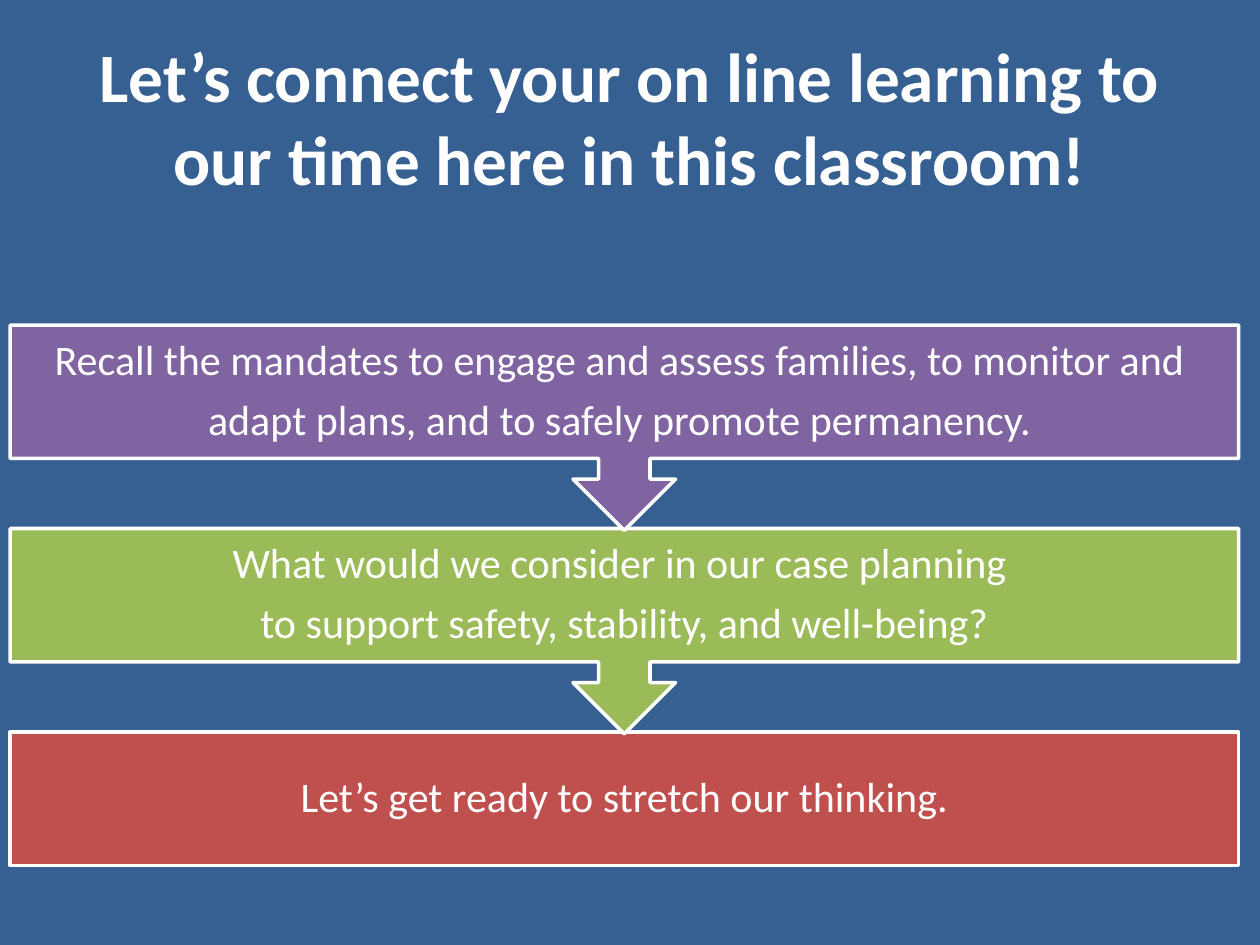
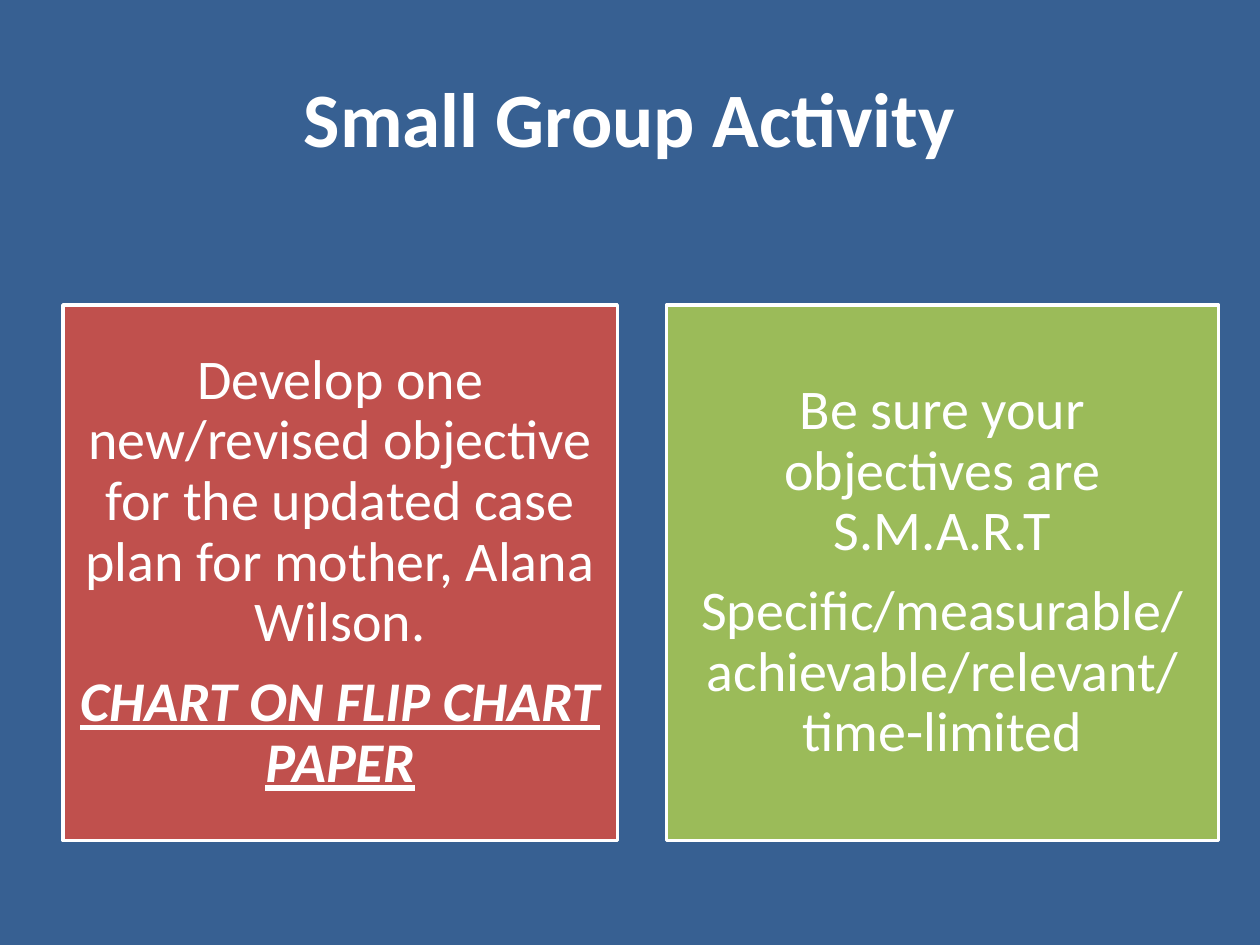
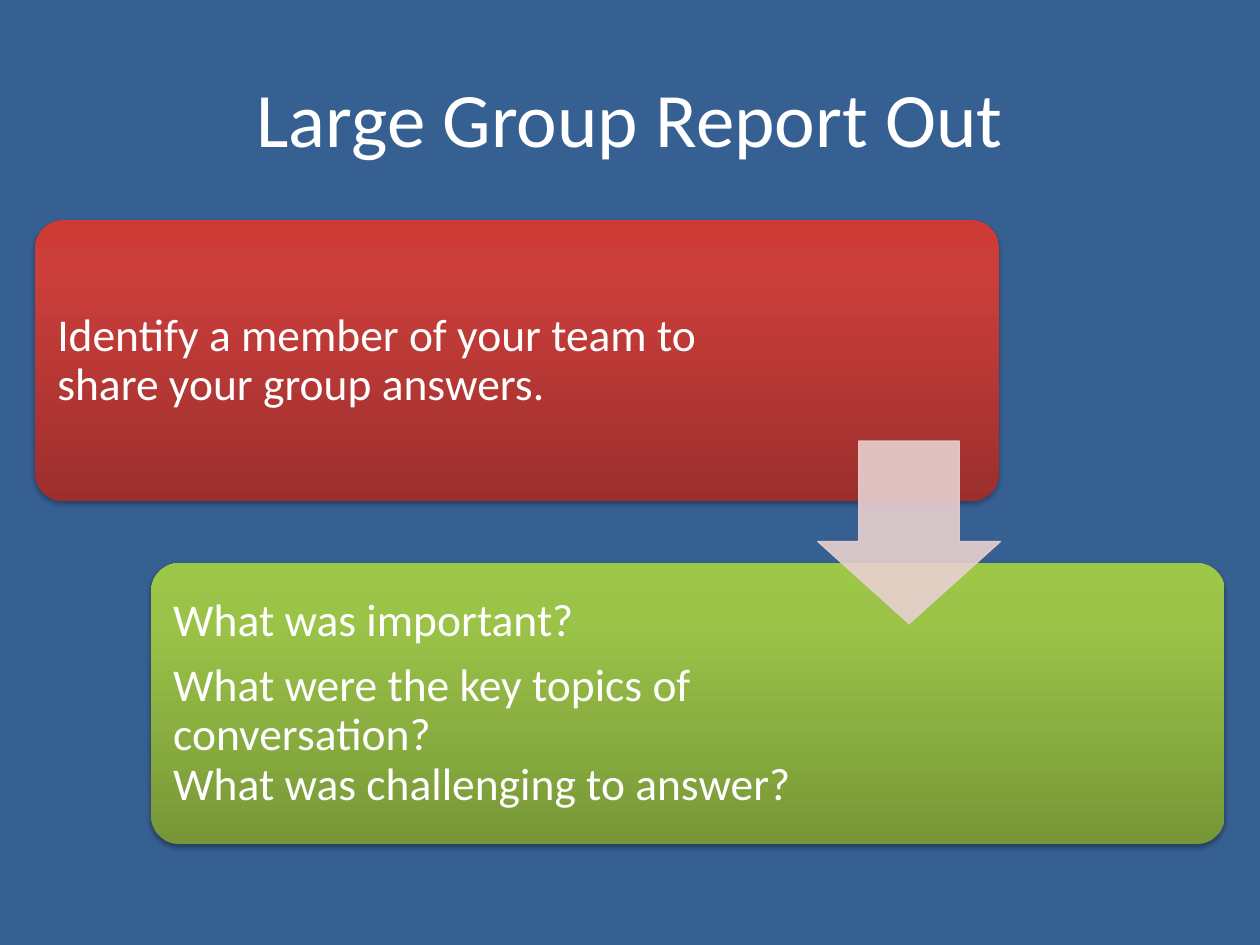
from copy import deepcopy
from dataclasses import dataclass

from pptx import Presentation
from pptx.dml.color import RGBColor
from pptx.enum.shapes import MSO_SHAPE
from pptx.enum.text import MSO_ANCHOR, MSO_AUTO_SIZE, PP_ALIGN
from pptx.oxml.ns import qn
from pptx.oxml import parse_xml
from pptx.util import Inches, Pt

RECT = MSO_SHAPE.RECTANGLE
ROUNDED = MSO_SHAPE.ROUNDED_RECTANGLE
CALLOUT = MSO_SHAPE.DOWN_ARROW_CALLOUT
DOWN_ARROW = MSO_SHAPE.DOWN_ARROW
CENTER, LEFT = PP_ALIGN.CENTER, PP_ALIGN.LEFT
MIDDLE, NO_FIT = MSO_ANCHOR.MIDDLE, MSO_AUTO_SIZE.NONE
TITLE_ONLY = 5
A_NS = "http://schemas.openxmlformats.org/drawingml/2006/main"


@dataclass(frozen=True)
class Theme:
    font: str = "Calibri"
    background: str = "376092"
    white: str = "FFFFFF"
    red: str = "C0504D"
    green: str = "9BBB59"
    purple: str = "8064A2"
    pale_red: str = "E8D0D0"
    red_gradient: tuple = ((0, "9C2F2D"), (0.8, "CB3E3A"), (1, "CE3B37"))
    green_gradient: tuple = ((0, "779737"), (0.8, "9BC348"), (1, "9DC746"))
    title_size: float = 44
    long_title_size: float = 39.6
    step_size: float = 24
    task_size: float = 32
    report_size: float = 26
    outline: float = 2
    line_spacing: float = 0.9
    paragraph_gap: float = 0.35  # share of the type size


T = Theme()


@dataclass(frozen=True)
class Para:
    text: str
    strong: bool = False


@dataclass(frozen=True)
class Box:
    left: float
    top: float
    width: float
    height: float
    fill: str | tuple  # one colour, or gradient stops
    paras: tuple[Para, ...]
    kind: int = RECT


def rgb(color: str) -> RGBColor:
    return RGBColor.from_string(color)


# Shared drawing functions
def add_slide(prs, title: str, size: float = T.title_size, bold: bool = True):
    s = prs.slides.add_slide(prs.slide_layouts[TITLE_ONLY])
    sp = s.shapes.title
    sp.left, sp.top = Inches(0.5), Inches(0.3)
    sp.width, sp.height = Inches(9), Inches(1.25)
    tf = sp.text_frame
    tf.text = title
    tf.auto_size, tf.vertical_anchor = NO_FIT, MIDDLE
    p = tf.paragraphs[0]
    p.alignment = CENTER
    set_font(p.font, size)
    p.font.bold = bold
    return s


def set_font(font, size: float) -> None:
    font.name, font.size = T.font, Pt(size)
    font.color.rgb = rgb(T.white)


def add_preset(s, kind: int, left: float, top: float, width: float, height: float):
    sp = s.shapes.add_shape(kind, Inches(left), Inches(top), Inches(width), Inches(height))
    sp.shadow.inherit = False
    return sp


def write(sp, paras: tuple[Para, ...], size: float, inset: float,
          right_inset: float, align: int) -> None:
    tf = sp.text_frame
    tf.word_wrap, tf.vertical_anchor = True, MIDDLE
    tf.margin_left = tf.margin_top = tf.margin_bottom = Inches(inset)
    tf.margin_right = Inches(right_inset)
    for i, para in enumerate(paras):
        p = tf.add_paragraph() if i else tf.paragraphs[0]
        p.text, p.alignment = para.text, align
        p.line_spacing = T.line_spacing
        p.space_after = Pt(T.paragraph_gap * size)
        set_font(p.font, size)
        if para.strong:
            p.font.bold = p.font.italic = p.font.underline = True


def fill_gradient(sp, stops: tuple) -> None:
    sp.fill.gradient()
    sp.fill.gradient_angle = 90
    stop_list = sp._element.spPr.find(".//" + qn("a:gsLst"))
    while len(stop_list) < len(stops):
        stop_list.append(deepcopy(stop_list[-1]))
    for stop, (position, color) in zip(sp.fill.gradient_stops, stops):
        stop.position, stop.color.rgb = position, rgb(color)


def add_soft_shadow(sp) -> None:
    sp._element.spPr.find(qn("a:effectLst")).append(parse_xml(
        f'<a:outerShdw xmlns:a="{A_NS}" blurRad="{Pt(3.1)}" dist="{Pt(1.8)}" '
        'dir="5400000" rotWithShape="0"><a:srgbClr val="000000">'
        '<a:alpha val="35000"/></a:srgbClr></a:outerShdw>'))


def add_flat_box(s, box: Box, size: float, inset: float) -> None:
    sp = add_preset(s, box.kind, box.left, box.top, box.width, box.height)
    sp.fill.solid()
    sp.fill.fore_color.rgb = rgb(box.fill)
    sp.line.color.rgb, sp.line.width = rgb(T.white), Pt(T.outline)
    write(sp, box.paras, size, inset, inset, CENTER)


def add_report_box(s, box: Box, right_inset: float) -> None:
    sp = add_preset(s, ROUNDED, box.left, box.top, box.width, box.height)
    sp.adjustments[0] = 0.1
    fill_gradient(sp, box.fill)
    sp.line.fill.background()
    add_soft_shadow(sp)
    write(sp, box.paras, T.report_size, 0.11, right_inset, LEFT)


# Slides
def build_connection(prs) -> None:
    s = add_slide(prs, "Let’s connect your on line learning to our time here in this classroom!",
                  T.long_title_size)
    steps = (
        (T.purple, (Para("Recall the mandates to engage and assess families, to monitor and "),
                    Para("adapt plans, and to safely promote permanency. "))),
        (T.green, (Para("What would we consider in our case planning "),
                   Para("to support safety, stability, and well-being?"))),
        (T.red, (Para("Let’s get ready to stretch our thinking."),)),
    )
    first_top, last_top = 2.58, 5.81
    last = len(steps) - 1
    pitch = (last_top - first_top) / last
    # From the bottom up, so each arrow tip lies over the next step
    for i in reversed(range(len(steps))):
        color, paras = steps[i]
        kind, height = (RECT, 1.06) if i == last else (CALLOUT, 1.63)
        add_flat_box(s, Box(0.08, first_top + i * pitch, 9.75, height, color, paras, kind),
                     T.step_size, 0.19)


def build_small_group(prs) -> None:
    s = add_slide(prs, "Small Group Activity")
    tasks = (
        Box(0.5, 2.42, 4.4, 4.25, T.red, (
            Para("Develop one new/revised objective for the updated case plan "
                 "for mother, Alana Wilson."),
            Para("CHART ON FLIP CHART PAPER", strong=True))),
        Box(5.29, 2.42, 4.38, 4.25, T.green, (
            Para("Be sure your objectives are S.M.A.R.T"),
            Para("Specific/measurable/ achievable/relevant/ time-limited"))),
    )
    for task in tasks:
        add_flat_box(s, task, T.task_size, 0.13)


def build_report_out(prs) -> None:
    s = add_slide(prs, "Large Group Report Out", bold=False)
    add_report_box(s, Box(0.28, 1.75, 7.65, 2.23, T.red_gradient, (
        Para("Identify a member of your team to share your group answers."),)), 2.27)
    add_report_box(s, Box(1.2, 4.47, 8.52, 2.23, T.green_gradient, (
        Para("What was important?"),
        Para("What were the key topics of conversation? \vWhat was challenging to answer?"),
    )), 3.22)

    # Translucent arrow from the first box to the second
    arrow = add_preset(s, DOWN_ARROW, 6.49, 3.5, 1.45, 1.45)
    arrow.adjustments[0], arrow.adjustments[1] = 0.55, 0.45
    arrow.fill.solid()
    arrow.fill.fore_color.rgb = arrow.line.color.rgb = rgb(T.pale_red)
    arrow.line.width = Pt(0.75)
    for color in arrow._element.spPr.iter(qn("a:srgbClr")):
        color.append(parse_xml(f'<a:alpha xmlns:a="{A_NS}" val="90000"/>'))


def main() -> None:
    prs = Presentation()
    prs.slide_width, prs.slide_height = Inches(10), Inches(7.5)
    background = prs.slide_master.background.fill
    background.solid()
    background.fore_color.rgb = rgb(T.background)
    build_connection(prs)
    build_small_group(prs)
    build_report_out(prs)
    prs.save("out.pptx")


if __name__ == "__main__":
    main()
